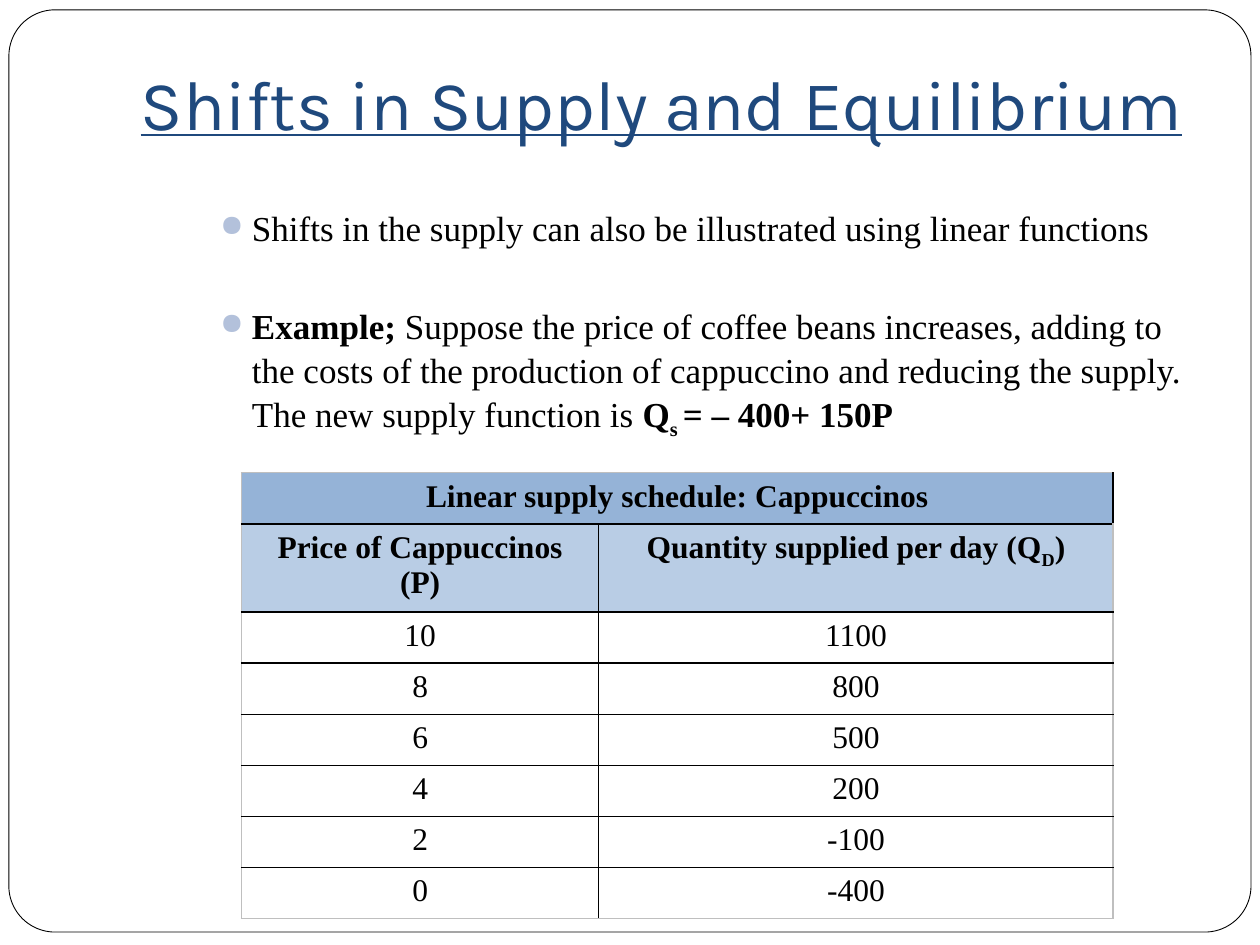
from dataclasses import dataclass

from lxml.etree import SubElement
from pptx import Presentation
from pptx.dml.color import RGBColor
from pptx.enum.shapes import MSO_SHAPE as Shape
from pptx.enum.text import MSO_ANCHOR as Anchor, PP_ALIGN as Align
from pptx.oxml.ns import qn
from pptx.util import Cm, Pt


@dataclass(frozen=True)
class Theme:
    title_font: str = "Karla"
    text_font: str = "Times New Roman"
    title_size: int = 40
    body_size: int = 20
    table_size: int = 18
    paper: str = "FFFFFF"
    ink: str = "000000"
    title: str = "1F497D"
    bullet: str = "B3C1DB"
    caption_fill: str = "95B3D7"
    header_fill: str = "B9CDE5"
    outer_border: str = "BFBFBF"


@dataclass(frozen=True)
class Span:
    text: str
    bold: bool = False
    subscript: bool = False


@dataclass(frozen=True)
class Row:
    cells: tuple[tuple[Span, ...], ...]
    fill: str


THEME = Theme()

BULLETS = (
    (Span("Shifts in the supply can also be illustrated using linear functions"),),
    (
        Span("Example; ", bold=True),
        Span("Suppose the price of coffee beans increases, adding to the costs of the "
             "production of cappuccino and reducing the supply. The new supply function is "),
        Span("Q", bold=True),
        Span("s ", bold=True, subscript=True),
        Span("= – 400+ 150P", bold=True),
    ),
)

SCHEDULE = ((10, 1100), (8, 800), (6, 500), (4, 200), (2, -100), (0, -400))
ROWS = (
    Row(((Span("Linear supply schedule: Cappuccinos", bold=True),), ()), THEME.caption_fill),
    Row((
        (Span("Price of Cappuccinos (P)", bold=True),),
        (Span("Quantity supplied per day (Q", bold=True),
         Span("D", bold=True, subscript=True),
         Span(")", bold=True)),
    ), THEME.header_fill),
    *(Row(tuple((Span(str(value)),) for value in pair), THEME.paper) for pair in SCHEDULE),
)
COLUMN_WIDTHS = (Cm(7.2), Cm(10.37))
ROW_HEIGHT = Cm(1.03)


def color(value: str) -> RGBColor:
    return RGBColor.from_string(value)


def add_spans(para, spans: tuple[Span, ...], size: int) -> None:
    for span in spans:
        run = para.add_run()
        run.text = span.text
        font = run.font
        font.name, font.size, font.bold = THEME.text_font, Pt(size), span.bold
        font.color.rgb = color(THEME.ink)
        if span.subscript:
            run._r.get_or_add_rPr().set("baseline", "-25000")


def add_bullet(para) -> None:
    props = para._p.get_or_add_pPr()
    props.set("marL", str(Cm(2.29)))
    props.set("indent", str(-Cm(0.64)))
    tint = SubElement(props, qn("a:buClr"))
    SubElement(tint, qn("a:srgbClr"), val=THEME.bullet)
    SubElement(props, qn("a:buSzPct"), val="85000")
    SubElement(props, qn("a:buChar"), char="●")


def set_borders(cell, edges: dict[str, str]) -> None:
    """Edges must be in schema order and set before the fill."""
    props = cell._tc.get_or_add_tcPr()
    for side, tint in edges.items():
        line = SubElement(props, qn(f"a:ln{side}"), w=str(Pt(1)))
        fill = SubElement(line, qn("a:solidFill"))
        SubElement(fill, qn("a:srgbClr"), val=tint)


def add_frame(page) -> None:
    frame = page.shapes.add_shape(
        Shape.ROUNDED_RECTANGLE, Cm(0.18), Cm(0.2), Cm(25.04), Cm(18.59))
    frame.adjustments[0] = 0.05
    frame.shadow.inherit = False
    frame.fill.solid()
    frame.fill.fore_color.rgb = color(THEME.paper)
    frame.line.color.rgb = color(THEME.ink)
    frame.line.width = Pt(0.5)


def add_title(page, text: str) -> None:
    box = page.shapes.add_textbox(Cm(2.54), Cm(0.76), Cm(21.59), Cm(2.41))
    box.text_frame.word_wrap = True
    box.text_frame.vertical_anchor = Anchor.BOTTOM
    box.text_frame.margin_bottom = Cm(0.25)
    para = box.text_frame.paragraphs[0]
    para.alignment = Align.CENTER
    run = para.add_run()
    run.text = text
    font = run.font
    font.name, font.size, font.underline = THEME.title_font, Pt(THEME.title_size), True
    font.color.rgb = color(THEME.title)


def add_body(page) -> None:
    box = page.shapes.add_textbox(Cm(2.54), Cm(4), Cm(21.59), Cm(7.2))
    frame = box.text_frame
    frame.word_wrap = True
    for index, spans in enumerate(BULLETS):
        para = frame.add_paragraph() if index else frame.paragraphs[0]
        para.line_spacing = 1.04
        para.space_before = Pt(31.4 if index else 0)
        add_bullet(para)
        add_spans(para, spans, THEME.body_size)


def add_schedule(page) -> None:
    table = page.shapes.add_table(
        len(ROWS), len(COLUMN_WIDTHS), Cm(4.87), Cm(9.53),
        sum(COLUMN_WIDTHS), ROW_HEIGHT * len(ROWS)).table
    for column, width in zip(table.columns, COLUMN_WIDTHS):
        column.width = width
    last_row, last_column = len(ROWS) - 1, len(COLUMN_WIDTHS) - 1
    for r, row in enumerate(ROWS):
        table.rows[r].height = ROW_HEIGHT
        for c, spans in enumerate(row.cells):
            cell = table.cell(r, c)
            outer = {"L": c == 0, "R": c == last_column, "T": r == 0, "B": r == last_row}
            set_borders(cell, {side: THEME.outer_border if is_outer else THEME.ink
                               for side, is_outer in outer.items()})
            cell.fill.solid()
            cell.fill.fore_color.rgb = color(row.fill)
            para = cell.text_frame.paragraphs[0]
            para.alignment = Align.CENTER
            add_spans(para, spans, THEME.table_size)
    # The caption spans the full width
    table.cell(0, 0).merge(table.cell(0, last_column))


def main() -> None:
    deck = Presentation()
    deck.slide_width, deck.slide_height = Cm(25.4), Cm(19.05)
    page = deck.slides.add_slide(deck.slide_layouts[6])
    add_frame(page)
    add_title(page, "Shifts in Supply and Equilibrium")
    add_body(page)
    add_schedule(page)
    deck.save("out.pptx")


if __name__ == "__main__":
    main()
